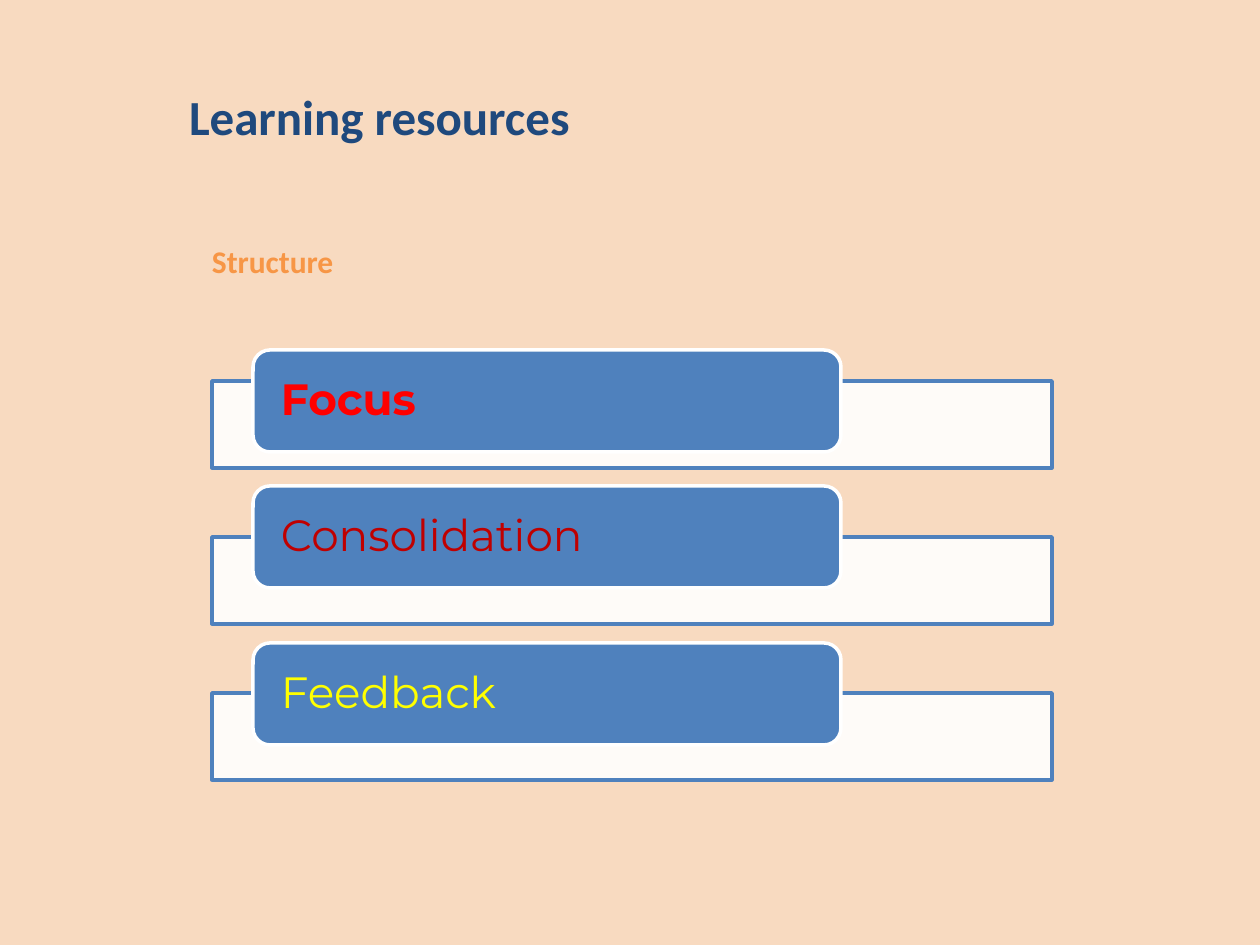
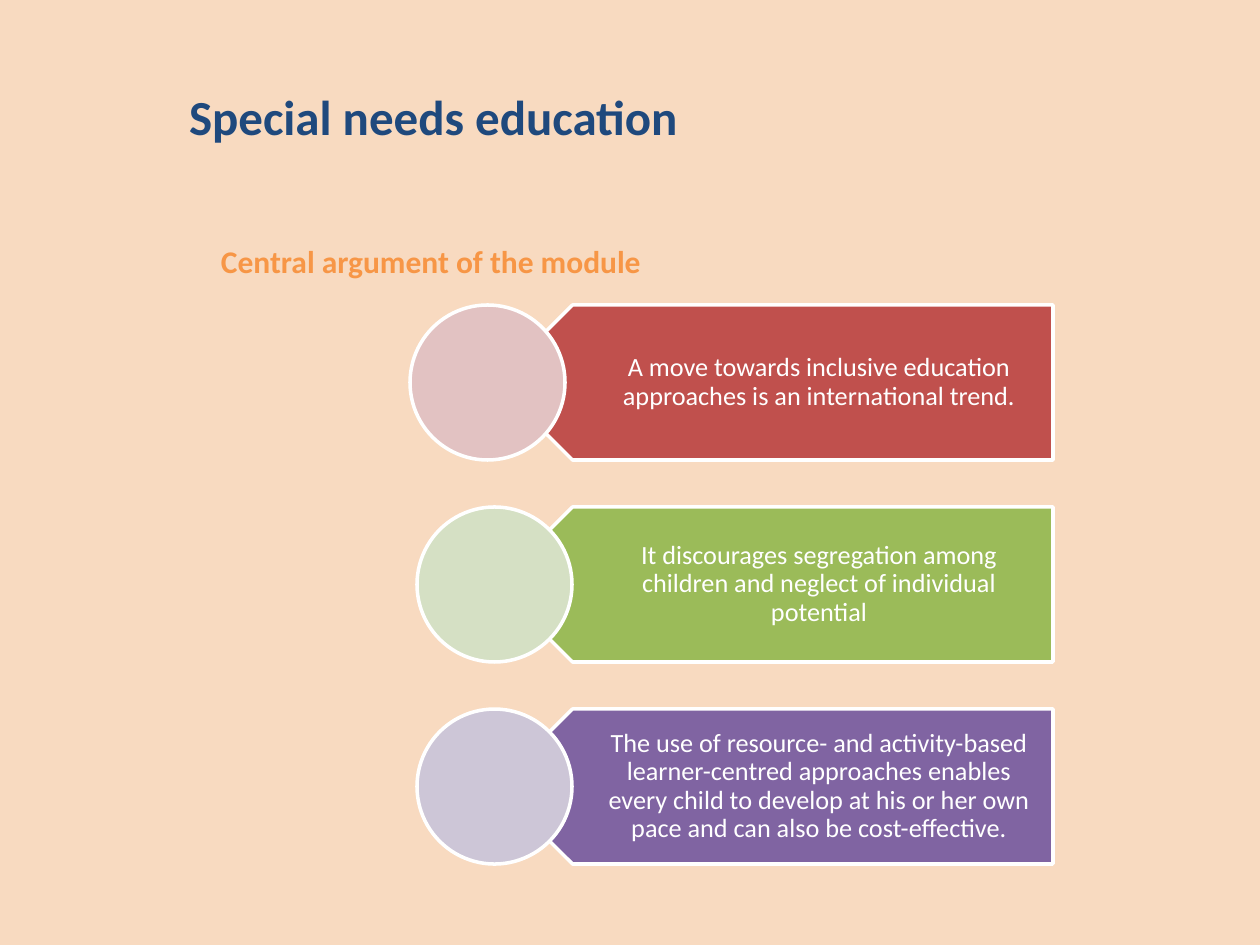
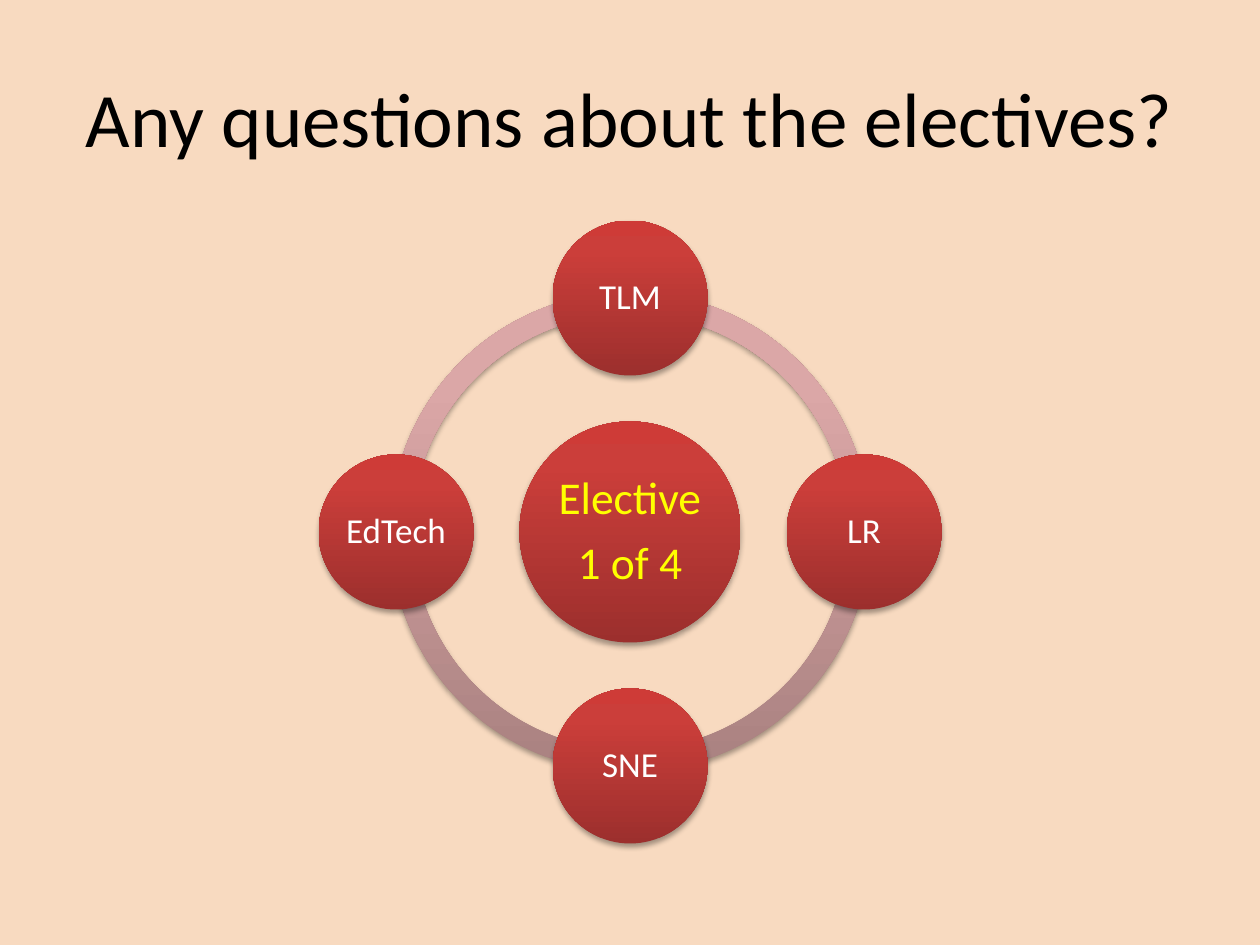
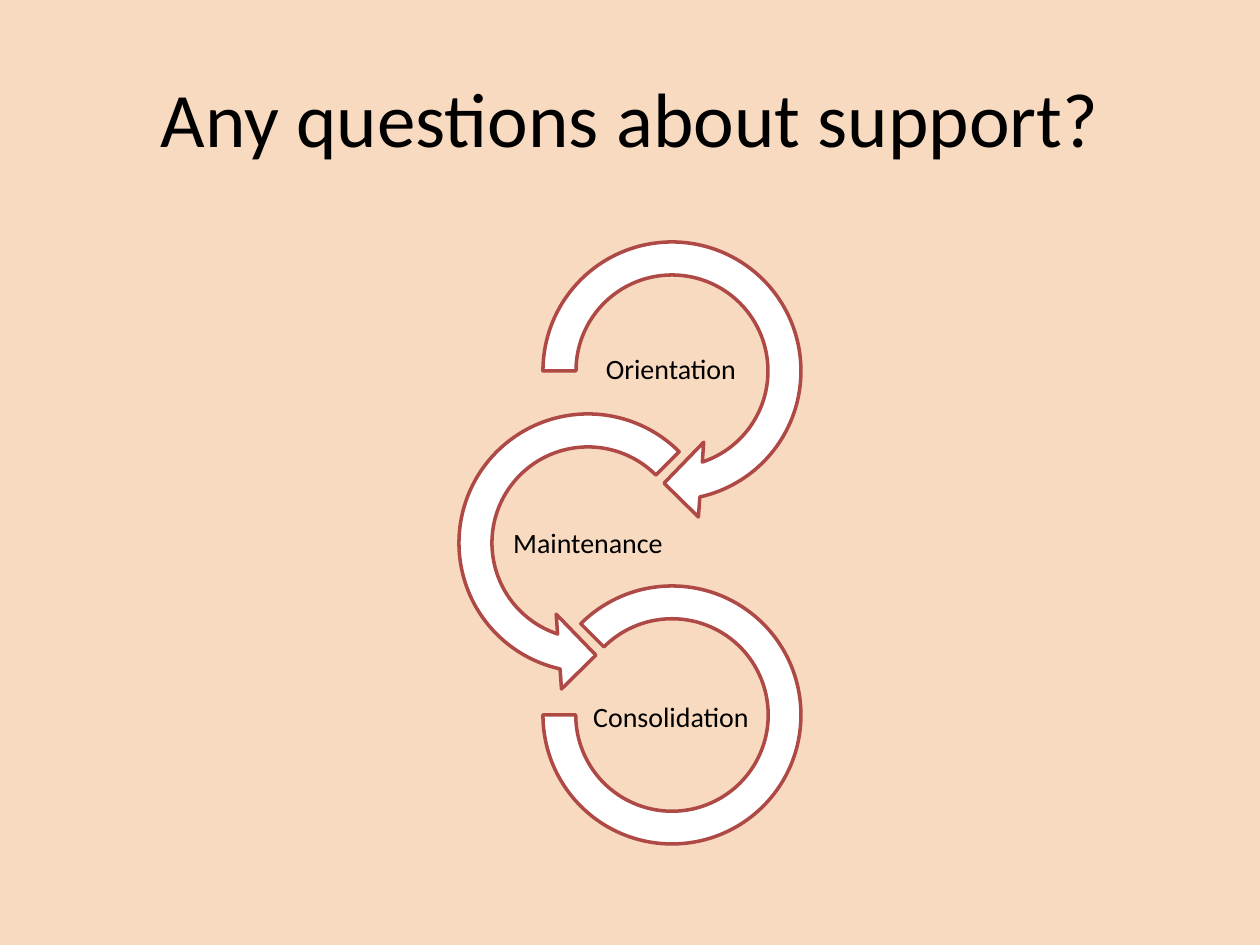
from dataclasses import dataclass
from math import cos, radians, sin

from lxml.etree import SubElement
from pptx import Presentation
from pptx.dml.color import RGBColor
from pptx.enum.shapes import MSO_SHAPE
from pptx.enum.text import MSO_ANCHOR, MSO_AUTO_SIZE, PP_ALIGN
from pptx.oxml.ns import qn
from pptx.util import Emu, Pt


@dataclass(frozen=True)
class Theme:
    backdrop: str = "F8DAC0"
    navy: str = "1F497D"
    orange: str = "F79646"
    blue: str = "4F81BD"
    white: str = "FFFFFF"
    black: str = "000000"
    red: str = "FF0000"
    dark_red: str = "C00000"
    yellow: str = "FFFF00"
    arrow_line: str = "AE4946"
    disc_stops: tuple = ((0, "9C2F2D"), (80, "CB3E3A"), (100, "CE3B37"))
    ring_stops: tuple = ((0, "A98180"), (80, "DBA7A7"), (100, "DDA7A6"))
    font: str = "Calibri"
    pill_font: str = "Montserrat"
    question: int = 44
    heading: int = 28
    hub: int = 26
    pill: int = 25
    node: int = 20
    subheading: int = 18
    stage: int = 16
    argument: int = 15
    line: int = 2


T = Theme()
EMU_PER_PX = 914400 / 126


def px(n):
    return Emu(round(n * EMU_PER_PX))


def rgb(value):
    return RGBColor.from_string(value)


def write(s, lines, size, color, font=T.font, bold=False, align=PP_ALIGN.CENTER,
          anchor=MSO_ANCHOR.MIDDLE, spacing=0.9, margins=(0, 0, 0, 0)):
    tf = s.text_frame
    tf.word_wrap = True
    tf.auto_size = MSO_AUTO_SIZE.NONE
    tf.vertical_anchor = anchor
    tf.margin_left, tf.margin_top, tf.margin_right, tf.margin_bottom = map(px, margins)
    for i, line in enumerate(lines):
        p = tf.add_paragraph() if i else tf.paragraphs[0]
        p.alignment = align
        p.line_spacing = spacing
        if i:
            p.space_before = Pt(round(size * 0.35))
        r = p.add_run()
        r.text = line
        r.font.name = font
        r.font.size = Pt(size)
        r.font.bold = bold
        r.font.color.rgb = rgb(color)


def add_text(slide, box, lines, size, color, **style):
    write(slide.shapes.add_textbox(*map(px, box)), lines, size, color, **style)


def add_shape(slide, kind, box, fill=None, line=None, adjustments=()):
    s = slide.shapes.add_shape(kind, *map(px, box))
    s.shadow.inherit = False
    for i, value in enumerate(adjustments):
        s.adjustments[i] = value
    if fill:
        s.fill.solid()
        s.fill.fore_color.rgb = rgb(fill)
    if line:
        s.line.color.rgb = rgb(line)
        s.line.width = Pt(T.line)
    else:
        s.line.fill.background()
    return s


def set_alpha(s, percent):
    color = s._element.spPr.find(qn("a:solidFill")).find(qn("a:srgbClr"))
    SubElement(color, qn("a:alpha"), val=str(percent * 1000))


def add_glossy(slide, kind, box, stops, adjustments=()):
    s = add_shape(slide, kind, box, adjustments=adjustments)
    s.fill.gradient()
    s.fill.gradient_angle = 90
    spPr = s._element.spPr
    stop_list = spPr.find(qn("a:gradFill")).find(qn("a:gsLst"))
    for stop in list(stop_list):
        stop_list.remove(stop)
    for position, color in stops:
        stop = SubElement(stop_list, qn("a:gs"), pos=str(position * 1000))
        SubElement(stop, qn("a:srgbClr"), val=color)
    shadow = SubElement(spPr.find(qn("a:effectLst")), qn("a:outerShdw"), blurRad="40000",
                        dist="23000", dir="5400000", rotWithShape="0")
    color = SubElement(shadow, qn("a:srgbClr"), val=T.black)
    SubElement(color, qn("a:alpha"), val="35000")
    return s


def add_titled_slide(prs, box, title, size, color, **style):
    slide = prs.slides.add_slide(prs.slide_layouts[5])
    s = slide.shapes.title
    s.left, s.top, s.width, s.height = map(px, box)
    write(s, [title], size, color, **style)
    return slide


def add_module_slide(prs, title, subheading, left):
    style = dict(bold=True, align=PP_ALIGN.LEFT, anchor=MSO_ANCHOR.TOP)
    slide = add_titled_slide(prs, (189, 89, 893, 149), title, T.heading, T.navy,
                             spacing=Pt(32), **style)
    add_text(slide, (left, 238, 893, 617), [subheading], T.subheading, T.orange,
             spacing=Pt(24), margins=(53, 0, 0, 0), **style)
    return slide


def add_question_slide(prs, title):
    return add_titled_slide(prs, (63, 38, 1134, 158), title, T.question, T.black,
                            spacing=1.0, margins=(13, 6, 13, 6))


def add_pill_row(slide, bar_top, pill_top, label, color, bold):
    bar = add_shape(slide, MSO_SHAPE.RECTANGLE, (212, bar_top, 840, 87), T.white, T.blue)
    set_alpha(bar, 90)
    pill = add_shape(slide, MSO_SHAPE.ROUNDED_RECTANGLE, (253, pill_top, 588, 102),
                     T.blue, T.white)
    write(pill, [label], T.pill, color, font=T.pill_font, bold=bold,
          align=PP_ALIGN.LEFT, margins=(23, 0, 23, 0))


def add_argument(slide, top, disc_left, text, plate_color, disc_color):
    plate = add_shape(slide, MSO_SHAPE.PENTAGON, (495, top, 558, 155), plate_color, T.white)
    plate.rotation = 180
    add_text(slide, (533, top, 519, 155), [text], T.argument, T.white, margins=(68, 8, 15, 8))
    add_shape(slide, MSO_SHAPE.OVAL, (disc_left, top, 155, 155), disc_color, T.white)


def add_disc(slide, center, size, lines, text_size, color, margin):
    x, y = center
    s = add_glossy(slide, MSO_SHAPE.OVAL, (x - size / 2, y - size / 2, size, size), T.disc_stops)
    write(s, lines, text_size, color, margins=(margin,) * 4)


def add_stage(slide, kind, corner, size, adjustments, label, label_corner):
    add_shape(slide, kind, (*corner, size, size), T.white, T.arrow_line, adjustments)
    add_text(slide, (*label_corner, 166, 83), [label], T.stage, T.black, margins=(1, 1, 1, 1))


def build_resources(prs):
    slide = add_module_slide(prs, "Learning resources", "Structure", 159)
    rows = [(350, "Focus", T.red, True),
            (486, "Consolidation", T.dark_red, False),
            (643, "Feedback", T.yellow, False)]
    for i, row in enumerate(rows):
        add_pill_row(slide, 381 + 156 * i, *row)


def build_special_needs(prs):
    slide = add_module_slide(prs, "Special needs education",
                             "Central argument of the module", 168)
    arguments = [
        (410, "A move towards inclusive education approaches is an international trend.",
         "C0504D", "E2C2C2"),
        (417, "It discourages segregation among children and neglect of individual potential",
         "9BBB59", "D5E0C4"),
        (417, "The use of resource- and activity-based learner-centred approaches enables "
              "every child to develop at his or her own pace and can also be cost-effective.",
         "8064A2", "CDC6D7"),
    ]
    for i, argument in enumerate(arguments):
        add_argument(slide, 305 + 202 * i, *argument)


def build_electives(prs):
    slide = add_question_slide(prs, "Any questions about the electives?")
    cx, cy, radius = 630, 532, 234
    quarter = 54
    for start in (108, 54, 0, 162):
        end = (start + quarter) % (4 * quarter)
        add_glossy(slide, MSO_SHAPE.BLOCK_ARC, (cx - 240, cy - 240, 480, 480),
                   T.ring_stops, (start, end, 0.046))
    add_disc(slide, (cx, cy), 221, ["Elective", "1 of 4"], T.hub, T.yellow, 5)
    for i, label in enumerate(["TLM", "LR", "SNE", "EdTech"]):
        angle = radians(90 * i - 90)
        center = (cx + radius * cos(angle), cy + radius * sin(angle))
        add_disc(slide, center, 155, [label], T.node, T.white, 4)


def build_support(prs):
    slide = add_question_slide(prs, "Any questions about support?")
    add_stage(slide, MSO_SHAPE.CIRCULAR_ARROW, (522, 221), 300,
              (0.11, 11.423, 45, 108, 0.125), "Orientation", (588, 329))
    add_stage(slide, MSO_SHAPE.LEFT_CIRCULAR_ARROW, (438, 393), 300,
              (0.11, 11.423, 63, 189, 0.125), "Maintenance", (505, 503))
    add_stage(slide, MSO_SHAPE.BLOCK_ARC, (543, 586), 258,
              (135, 108, 0.127), "Consolidation", (588, 677))


def main():
    prs = Presentation()
    prs.slide_width, prs.slide_height = px(1260), px(945)
    fill = prs.slide_master.background.fill
    fill.solid()
    fill.fore_color.rgb = rgb(T.backdrop)
    build_resources(prs)
    build_special_needs(prs)
    build_electives(prs)
    build_support(prs)
    prs.save("out.pptx")


if __name__ == "__main__":
    main()
